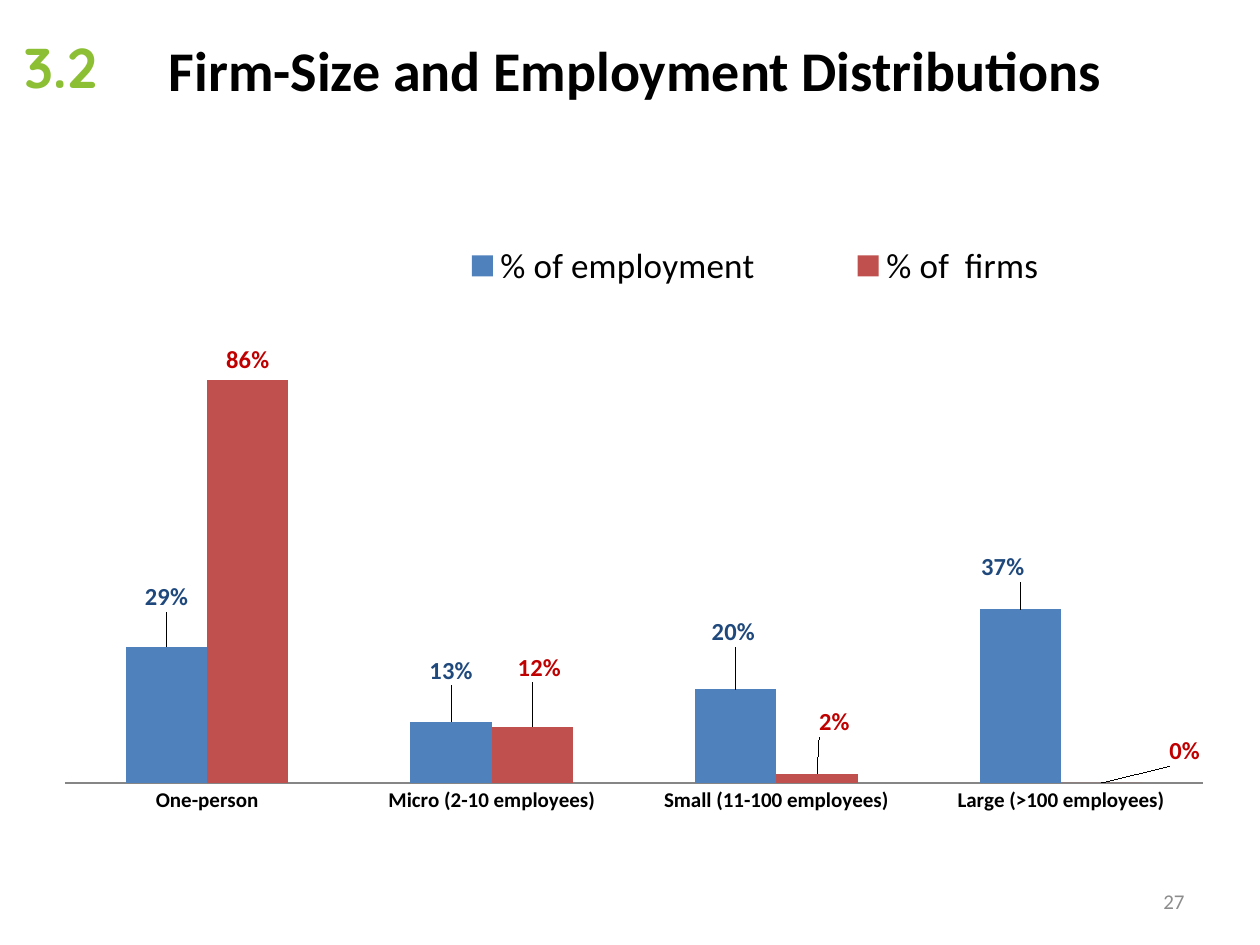
import pptx
import pptx.chart.data
import pptx.dml.color
import pptx.enum.chart
import pptx.enum.text
import pptx.oxml
import pptx.oxml.ns
import pptx.util

Pt = pptx.util.Pt
ALIGN = pptx.enum.text.PP_ALIGN
COLORS = {
    "text": "000000", "number": "8C8C8C", "section": "8CBF34", "axis": "868686",
    "employment": "4F81BD", "employment_label": "1F497D",
    "firms": "C0504D", "firms_label": "C00000",
}
CATEGORIES = ["One-person", "Micro (2-10 employees)",
              "Small (11-100 employees)", "Large (>100 employees)"]
# Name, colour key, values, label shifts as fractions of the chart size
SERIES = [
    ("% of employment", "employment", [0.29, 0.13, 0.20, 0.37],
     [(0, -0.046), (0, -0.048), (-0.002, -0.057), (-0.015, -0.034)]),
    ("% of  firms", "firms", [0.86, 0.12, 0.02, 0],
     [(0, 0), (0.006, -0.06), (0.015, -0.048), (0.071, -0.018)]),
]


def rgb(key):
    return pptx.dml.color.RGBColor.from_string(COLORS[key])


def set_font(font, size, color="text", bold=False, name="Calibri"):
    font.name, font.size, font.bold = name, Pt(size), bold
    font.color.rgb = rgb(color)


def add_text(slide, box, text, size, color, align, bold=False, name="Calibri",
             anchor=pptx.enum.text.MSO_ANCHOR.MIDDLE):
    frame = slide.shapes.add_textbox(*map(Pt, box)).text_frame
    frame.word_wrap = True
    frame.vertical_anchor = anchor
    paragraph = frame.paragraphs[0]
    paragraph.text = text
    paragraph.alignment = align
    set_font(paragraph.font, size, color, bold, name)


def make_layout(inner=False, edge=True, **fractions):
    """Return a manual chart layout; fractions are x, y and optionally w, h."""
    parts = '<c:layoutTarget val="inner"/>' if inner else ""
    if edge:
        parts += '<c:xMode val="edge"/><c:yMode val="edge"/>'
    parts += "".join(f'<c:{key} val="{value}"/>' for key, value in fractions.items())
    return pptx.oxml.parse_xml(
        f'<c:layout {pptx.oxml.ns.nsdecls("c")}>'
        f"<c:manualLayout>{parts}</c:manualLayout></c:layout>")


def style_series(series, key, shifts):
    series.format.fill.solid()
    series.format.fill.fore_color.rgb = rgb(key)
    series.invert_if_negative = False
    labels = series.data_labels
    labels.show_value = True
    labels.number_format, labels.number_format_is_linked = "0%", False
    labels.position = pptx.enum.chart.XL_LABEL_POSITION.OUTSIDE_END
    set_font(labels.font, 14, key + "_label", True)
    # Move single labels away from their bars
    for index, (x, y) in enumerate(shifts):
        if (x, y) == (0, 0):
            continue
        label = series.points[index].data_label
        label.position = pptx.enum.chart.XL_LABEL_POSITION.OUTSIDE_END
        set_font(label.font, 14, key + "_label", True)
        marker = series._element.xpath(f'.//c:dLbl/c:idx[@val="{index}"]')[0]
        marker.addnext(make_layout(edge=False, x=x, y=y))


def add_distribution_chart(slide, box):
    data = pptx.chart.data.CategoryChartData(number_format="0%")
    data.categories = CATEGORIES
    for name, _, values, _ in SERIES:
        data.add_series(name, values)
    chart = slide.shapes.add_chart(
        pptx.enum.chart.XL_CHART_TYPE.COLUMN_CLUSTERED, *map(Pt, box), data).chart
    chart.has_title = False
    set_font(chart.font, 10)
    plot = chart.plots[0]
    plot.gap_width, plot.overlap, plot.vary_by_categories = 150, 0, False
    for series, (_, key, _, shifts) in zip(plot.series, SERIES):
        style_series(series, key, shifts)

    # Axes
    axis = chart.category_axis
    axis.major_tick_mark = pptx.enum.chart.XL_TICK_MARK.NONE
    axis.format.line.color.rgb = rgb("axis")
    set_font(axis.tick_labels.font, 12, bold=True)
    scale = chart.value_axis
    scale.minimum_scale, scale.maximum_scale = 0, 1
    scale.has_major_gridlines = False
    scale.visible = False

    # Legend and plot area
    chart.has_legend = True
    legend = chart.legend
    legend.position = pptx.enum.chart.XL_LEGEND_POSITION.TOP
    legend.include_in_layout = False
    set_font(legend.font, 20)
    for layout in legend._element.xpath("c:layout"):
        legend._element.remove(layout)
    legend._element.xpath("c:legendPos")[0].addnext(
        make_layout(x=0.27, y=0.045, w=0.64, h=0.1))
    area = chart._chartSpace.xpath("c:chart/c:plotArea")[0]
    for layout in area.xpath("c:layout"):
        area.remove(layout)
    area.insert(0, make_layout(inner=True, x=0, y=0.169, w=0.973, h=0.72))


def add_header(slide, left, top):
    add_text(slide, (left + 59, top, 595.5, 60.5),
             "Firm-Size and Employment Distributions", 32, "text", ALIGN.CENTER, True)
    add_text(slide, (left, top + 5.7, 60, 46), "3.2", 32, "section", ALIGN.LEFT,
             True, "Quicksand", pptx.enum.text.MSO_ANCHOR.TOP)


def main():
    presentation = pptx.Presentation()
    presentation.slide_width, presentation.slide_height = Pt(720), Pt(540)
    slide = presentation.slides.add_slide(presentation.slide_layouts[6])
    add_header(slide, 6.5, 9.4)
    add_distribution_chart(slide, (36.7, 116.6, 669, 372.2))
    add_text(slide, (516, 500.5, 168, 28.75), "27", 12, "number", ALIGN.RIGHT)
    presentation.save("out.pptx")


if __name__ == "__main__":
    main()
